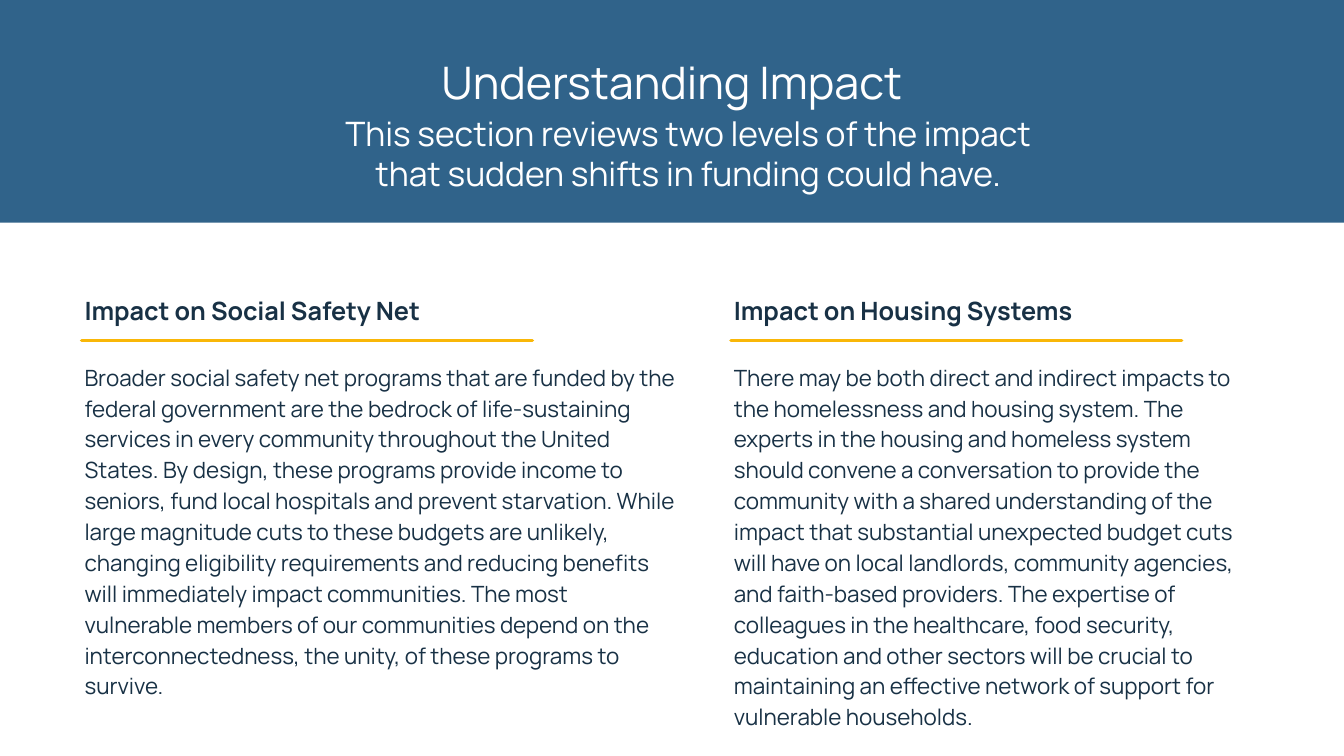
import lxml.etree
import pptx
import pptx.dml.color
import pptx.enum.shapes
import pptx.enum.text
import pptx.oxml.ns
import pptx.util

PX = 9144
FONT = "Manrope"
COLOURS = {"band": "30638A", "rule": "F9B708", "ink": "183145", "paper": "FFFFFF"}
ALIGN = pptx.enum.text.PP_ALIGN

COLUMNS = [
    (74, 608, 348, "Impact on Social Safety Net",
     "Broader social safety net programs that are funded by the federal government "
     "are the bedrock of life-sustaining services in every community throughout the "
     "United States. By design, these programs provide income to seniors, fund local "
     "hospitals and prevent starvation. While large magnitude cuts to these budgets "
     "are unlikely, changing eligibility requirements and reducing benefits will "
     "immediately impact communities. The most vulnerable members of our communities "
     "depend on the interconnectedness, the unity, of these programs to survive."),
    (718, 541, 379, "Impact on Housing Systems",
     "There may be both direct and indirect impacts to the homelessness and housing "
     "system. The experts in the housing and homeless system should convene a "
     "conversation to provide the community with a shared understanding of the impact "
     "that substantial unexpected budget cuts will have on local landlords, community "
     "agencies, and faith-based providers. The expertise of colleagues in the "
     "healthcare, food security, education and other sectors will be crucial to "
     "maintaining an effective network of support for vulnerable households."),
]


def px(*lengths):
    return [pptx.util.Emu(length * PX) for length in lengths]


def colour(name):
    return pptx.dml.color.RGBColor.from_string(COLOURS[name])


def write(box, text, size, ink="ink", bold=False, align=ALIGN.LEFT, spacing=1.0, after=0):
    frame = box.text_frame
    frame.word_wrap = True
    frame.auto_size = pptx.enum.text.MSO_AUTO_SIZE.NONE
    frame.vertical_anchor = pptx.enum.text.MSO_ANCHOR.TOP
    para = frame.paragraphs[0]
    para.alignment = align
    para.line_spacing = spacing
    para.space_before = pptx.util.Pt(0)
    para.space_after = pptx.util.Pt(after)
    span = para.add_run()
    span.text = text
    span.font.name = FONT
    span.font.size = pptx.util.Pt(size)
    span.font.bold = bold
    span.font.color.rgb = colour(ink)


def add_text(page, left, top, width, height, text, **style):
    box = page.shapes.add_textbox(*px(left, top, width, height))
    write(box, text, **style)


def add_band(page, width, height):
    band = page.shapes.add_shape(
        pptx.enum.shapes.MSO_SHAPE.RECTANGLE, *px(0, 0, width, height))
    band.shadow.inherit = False
    band.fill.solid()
    band.fill.fore_color.rgb = colour("band")
    band.line.fill.background()


def add_rule(page, left, top, length):
    rule = page.shapes.add_connector(
        pptx.enum.shapes.MSO_CONNECTOR.STRAIGHT, *px(left, top, left + length, top))
    rule.line.color.rgb = colour("rule")
    rule.line.width = pptx.util.Pt(2.5)
    rule.line._get_or_add_ln().set("cap", "rnd")
    lxml.etree.SubElement(rule._element.spPr, pptx.oxml.ns.qn("a:effectLst"))


def add_title(page, left, top, width, height, text, **style):
    title = page.shapes.title
    title.left, title.top, title.width, title.height = px(left, top, width, height)
    write(title, text, **style)
    page.shapes._spTree.append(title._element)


def main():
    deck = pptx.Presentation()
    deck.slide_width, deck.slide_height = px(1333, 750)
    page = deck.slides.add_slide(deck.slide_layouts[5])

    add_band(page, 1333, 221)
    add_title(page, 0, 49, 1333, 57, "Understanding Impact",
              size=32, ink="paper", align=ALIGN.CENTER)
    add_text(page, 300, 107, 765, 91,
             "This section reviews two levels of the impact that sudden shifts "
             "in funding could have.",
             size=24, ink="paper", align=ALIGN.CENTER)

    for left, width, height, heading, body in COLUMNS:
        add_text(page, left, 288, 593, 40, heading, size=18, bold=True)
        add_rule(page, left + 7, 338, 447)
        add_text(page, left, 352, width, height, body, size=16, spacing=1.15, after=6)

    deck.save("out.pptx")


if __name__ == "__main__":
    main()
